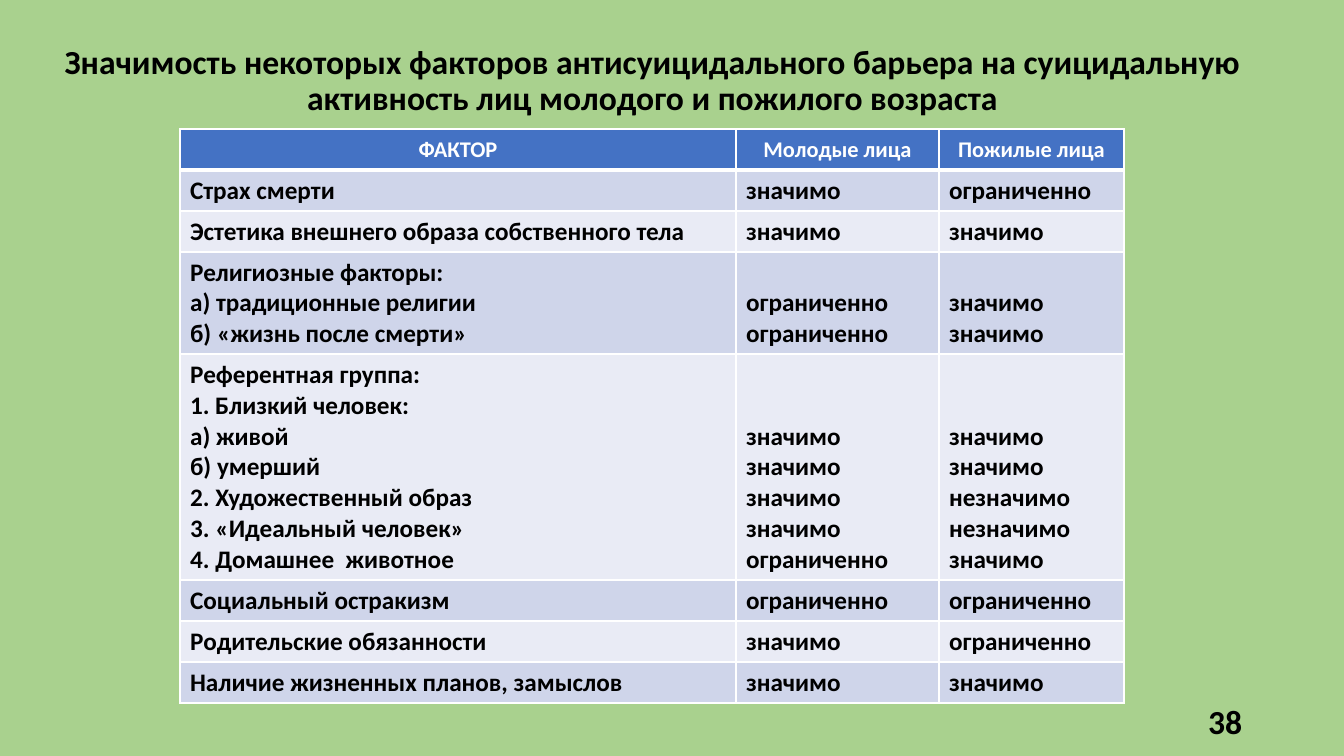
from lxml import etree
from pptx import Presentation
from pptx.dml.color import RGBColor
from pptx.enum.text import MSO_ANCHOR, PP_ALIGN
from pptx.oxml.ns import qn
from pptx.util import Emu, Pt

LEFT, CENTER, RIGHT = PP_ALIGN.LEFT, PP_ALIGN.CENTER, PP_ALIGN.RIGHT
MIDDLE, BOTTOM = MSO_ANCHOR.MIDDLE, MSO_ANCHOR.BOTTOM

PX_PER_INCH = 100.8
FONT = "Calibri"
GREEN, BLACK, WHITE = "A9D18E", "000000", "FFFFFF"
HEADER_BLUE, BANDS = "4472C4", ("CFD5EA", "E9EBF5")

TITLE = ("Значимость некоторых факторов антисуицидального барьера "
         "на суицидальную активность лиц молодого и пожилого возраста")
HEADINGS = ("ФАКТОР", "Молодые лица", "Пожилые лица")
YES, LIMITED, NO = "значимо", "ограниченно", "незначимо"
NUMBERED = "Близкий человек:"

# Each factor: its lines, the answers for the young, the answers for the old
FACTORS = [
    (["Страх смерти"], [YES], [LIMITED]),
    (["Эстетика внешнего образа собственного тела"], [YES], [YES]),
    (["Религиозные факторы:", "а) традиционные религии",
      "б) «жизнь после смерти»"], [LIMITED] * 2, [YES] * 2),
    (["Референтная группа:", NUMBERED, "а) живой", "б) умерший",
      "2. Художественный образ", "3. «Идеальный человек»",
      "4. Домашнее  животное"],
     [YES] * 4 + [LIMITED], [YES, YES, NO, NO, YES]),
    (["Социальный остракизм"], [LIMITED], [LIMITED]),
    (["Родительские обязанности"], [YES], [LIMITED]),
    (["Наличие жизненных планов, замыслов"], [YES], [YES]),
]
COLUMN_WIDTHS = (556, 203, 185)
ROW_HEIGHTS = (41, 41, 41, 102, 226, 41, 41, 41)


def px(length):
    return Emu(round(length * 914400 / PX_PER_INCH))


def color(hex_code):
    return RGBColor.from_string(hex_code)


def write_lines(frame, lines, size, hex_code, align):
    for index, line in enumerate(lines):
        paragraph = frame.paragraphs[0] if index == 0 else frame.add_paragraph()
        paragraph.alignment = align
        run = paragraph.add_run()
        run.text = line
        run.font.name = FONT
        run.font.size = Pt(size)
        run.font.bold = True
        run.font.color.rgb = color(hex_code)


def add_label(slide, text, box, align, line_spacing=1.0):
    frame = slide.shapes.add_textbox(*map(px, box)).text_frame
    frame.word_wrap = True
    frame.vertical_anchor = MIDDLE
    write_lines(frame, [text], 24, BLACK, align)
    frame.paragraphs[0].line_spacing = line_spacing


def add_number(paragraph):
    properties = paragraph._p.get_or_add_pPr()
    properties.set("marL", str(px(25)))
    properties.set("indent", str(-px(25)))
    etree.SubElement(properties, qn("a:buAutoNum"), type="arabicPeriod")


def set_borders(cell, bottom_width):
    properties = cell._tc.get_or_add_tcPr()
    for side, width in zip("LRTB", (1, 1, 1, bottom_width)):
        line = etree.SubElement(properties, qn("a:ln" + side), w=str(Pt(width)))
        fill = etree.SubElement(line, qn("a:solidFill"))
        etree.SubElement(fill, qn("a:srgbClr"), val=WHITE)


def fill_cell(cell, lines, size, text_color, fill_color, align, anchor,
              bottom_width=1):
    set_borders(cell, bottom_width)
    cell.fill.solid()
    cell.fill.fore_color.rgb = color(fill_color)
    cell.vertical_anchor = anchor
    write_lines(cell.text_frame, lines, size, text_color, align)


def add_factor_table(slide):
    box = (180, 129, sum(COLUMN_WIDTHS), sum(ROW_HEIGHTS))
    table = slide.shapes.add_table(len(ROW_HEIGHTS), len(COLUMN_WIDTHS),
                                   *map(px, box)).table
    for column, width in zip(table.columns, COLUMN_WIDTHS):
        column.width = px(width)
    for row, height in zip(table.rows, ROW_HEIGHTS):
        row.height = px(height)

    # Header row
    for column, heading in enumerate(HEADINGS):
        fill_cell(table.cell(0, column), [heading], 16, WHITE, HEADER_BLUE,
                  CENTER, MIDDLE, bottom_width=3)

    # Answers sit at the bottom, level with the last lines of their factor
    for row, factor in enumerate(FACTORS, start=1):
        for column, lines in enumerate(factor):
            cell = table.cell(row, column)
            fill_cell(cell, lines, 18, BLACK, BANDS[(row - 1) % 2],
                      LEFT, BOTTOM)
            if NUMBERED in lines:
                add_number(cell.text_frame.paragraphs[lines.index(NUMBERED)])


def main():
    presentation = Presentation()
    presentation.slide_width, presentation.slide_height = px(1344), px(756)
    slide = presentation.slides.add_slide(presentation.slide_layouts[6])
    slide.background.fill.solid()
    slide.background.fill.fore_color.rgb = color(GREEN)

    # Page number, title and table
    add_label(slide, "38", (950, 701, 302, 40), RIGHT)
    add_label(slide, TITLE, (54, 35, 1197, 93), CENTER, line_spacing=0.9)
    add_factor_table(slide)

    presentation.save("out.pptx")


if __name__ == "__main__":
    main()
